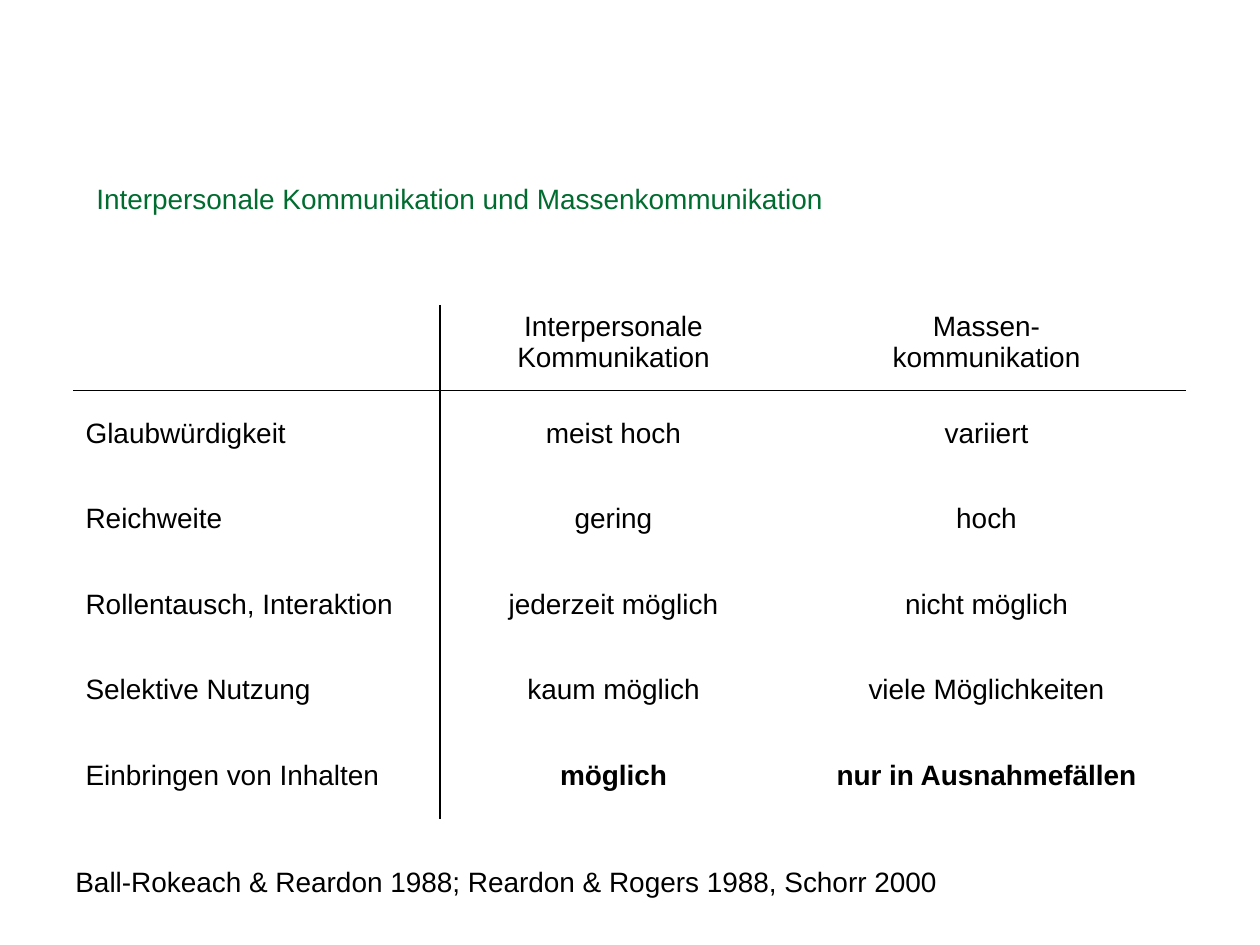
from dataclasses import dataclass

from lxml import etree
from pptx import Presentation
from pptx.dml.color import RGBColor
from pptx.enum.text import MSO_ANCHOR, PP_ALIGN
from pptx.oxml.ns import qn
from pptx.util import Emu, Pt

LEFT, CENTER = PP_ALIGN.LEFT, PP_ALIGN.CENTER
TOP, MIDDLE = MSO_ANCHOR.TOP, MSO_ANCHOR.MIDDLE
EMU_PER_PX = 914400 / 126
BLANK_LAYOUT = 6


@dataclass(frozen=True)
class Theme:
    """Colours, font and sizes of the slide."""
    font: str = "Arial"
    size: int = 16
    title: str = "006C30"
    text: str = "000000"
    rule: str = "000000"
    rule_width: int = 1


THEME = Theme()
TITLE = "Interpersonale Kommunikation und Massenkommunikation"
SOURCES = "Ball-Rokeach & Reardon 1988; Reardon & Rogers 1988, Schorr 2000"
COLUMN_WIDTHS = (367, 347, 399)
ROWS = (
    ("", "Interpersonale Kommunikation", "Massen-\vkommunikation"),
    ("Glaubwürdigkeit", "meist hoch", "variiert"),
    ("Reichweite", "gering", "hoch"),
    ("Rollentausch, Interaktion", "jederzeit möglich", "nicht möglich"),
    ("Selektive Nutzung", "kaum möglich", "viele Möglichkeiten"),
    ("Einbringen von Inhalten", "möglich", "nur in Ausnahmefällen"),
)


def px(length):
    """Turn whole pixels into EMU."""
    return Emu(round(length * EMU_PER_PX))


def write(paragraph, text, color, align=LEFT, bold=False):
    """Set a paragraph's text and format its runs."""
    paragraph.text = text
    paragraph.alignment = align
    paragraph.font.size = Pt(THEME.size)
    for run in paragraph.runs:
        run.font.name = THEME.font
        run.font.size = Pt(THEME.size)
        run.font.bold = bold
        run.font.color.rgb = RGBColor.from_string(color)


def add_text(slide, box, text, color):
    """Add a wrapped, top-anchored text box."""
    text_frame = slide.shapes.add_textbox(*map(px, box)).text_frame
    text_frame.word_wrap = True
    text_frame.vertical_anchor = TOP
    write(text_frame.paragraphs[0], text, color)


def set_borders(cell, ruled_sides):
    """Draw the ruled sides of a cell and clear the others."""
    properties = cell._tc.get_or_add_tcPr()
    for side in "LRTB":
        line = etree.SubElement(properties, qn(f"a:ln{side}"))
        if side in ruled_sides:
            line.set("w", str(Pt(THEME.rule_width)))
            fill = etree.SubElement(line, qn("a:solidFill"))
            etree.SubElement(fill, qn("a:srgbClr"), val=THEME.rule)
        else:
            line.set("w", "0")
            etree.SubElement(line, qn("a:noFill"))


def add_comparison(slide, box):
    """Add the comparison table with a ruled header row and label column."""
    frame = slide.shapes.add_table(len(ROWS), len(COLUMN_WIDTHS), *map(px, box))
    table = frame.table
    table.first_row = table.horz_banding = False
    for column, width in zip(table.columns, COLUMN_WIDTHS):
        column.width = px(width)
    row_rules = {0: "B", 1: "T"}
    column_rules = {0: "R", 1: "L"}
    last_row = len(ROWS) - 1
    for row_index, row in enumerate(ROWS):
        for column_index, text in enumerate(row):
            cell = table.cell(row_index, column_index)
            cell.vertical_anchor = MIDDLE if row_index else TOP
            write(cell.text_frame.paragraphs[0], text, THEME.text,
                  align=CENTER if column_index else LEFT,
                  bold=row_index == last_row and column_index > 0)
            set_borders(cell, row_rules.get(row_index, "") + column_rules.get(column_index, ""))
            cell.fill.background()


def main():
    """Build and save the slide."""
    presentation = Presentation()
    presentation.slide_width, presentation.slide_height = px(1260), px(945)
    slide = presentation.slides.add_slide(presentation.slide_layouts[BLANK_LAYOUT])
    add_text(slide, (84, 175, 1134, 158), TITLE, THEME.title)
    add_comparison(slide, (73, 305, sum(COLUMN_WIDTHS), 514))
    add_text(slide, (63, 858, 977, 47), SOURCES, THEME.text)
    presentation.save("out.pptx")


if __name__ == "__main__":
    main()
